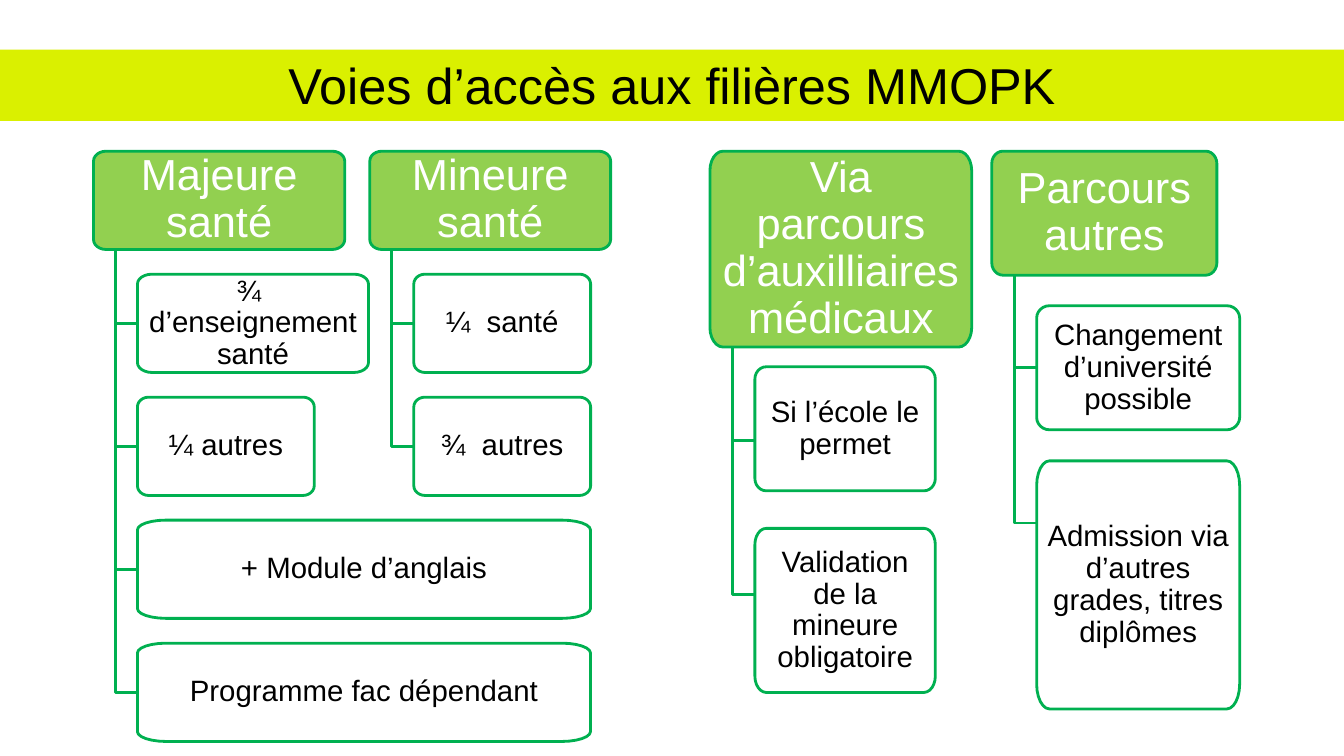
from dataclasses import dataclass
from math import cos, pi, sin

from pptx import Presentation
from pptx.dml.color import RGBColor
from pptx.enum.shapes import MSO_SHAPE
from pptx.enum.text import MSO_ANCHOR, PP_ALIGN
from pptx.util import Pt

RECTANGLE = MSO_SHAPE.RECTANGLE
TOP, MIDDLE = MSO_ANCHOR.TOP, MSO_ANCHOR.MIDDLE
CENTER = PP_ALIGN.CENTER


@dataclass(frozen=True)
class Theme:
    font: str = "Arial"
    black: RGBColor = RGBColor.from_string("000000")
    white: RGBColor = RGBColor.from_string("FFFFFF")
    banner: RGBColor = RGBColor.from_string("DAF000")
    header: RGBColor = RGBColor.from_string("92D050")
    outline: RGBColor = RGBColor.from_string("00B050")
    title_size: int = 36
    header_size: int = 31
    item_size: int = 21
    line_width: int = 2


theme = Theme()

TITLE_FORMAT = {"size": theme.title_size, "color": theme.black, "anchor": TOP,
                "margins": (7.2, 3.6), "spacing": 1.0}
HEADER_FORMAT = {"size": theme.header_size, "color": theme.white, "anchor": MIDDLE,
                 "margins": (7, 5), "spacing": 0.9,
                 "fill": theme.header, "corner": 0.05}
ITEM_FORMAT = {"size": theme.item_size, "color": theme.black, "anchor": MIDDLE,
               "margins": (5, 4.2), "spacing": 0.9,
               "fill": theme.white, "corner": 0.063}


def write_text(shape, text, style):
    frame = shape.text_frame
    side, edge = (Pt(margin) for margin in style["margins"])
    frame_values = {"word_wrap": True, "vertical_anchor": style["anchor"],
                    "margin_left": side, "margin_right": side,
                    "margin_top": edge, "margin_bottom": edge}
    for name, value in frame_values.items():
        setattr(frame, name, value)
    paragraph = frame.paragraphs[0]
    paragraph.alignment = CENTER
    paragraph.line_spacing = style["spacing"]
    run = paragraph.add_run()
    run.text = text
    for name, value in {"name": theme.font, "size": Pt(style["size"])}.items():
        setattr(run.font, name, value)
    run.font.color.rgb = style["color"]


def draw_outline(points, closed):
    """Draw a green outline through points given in points of length."""
    corners = [(Pt(x), Pt(y)) for x, y in points]
    builder = slide.shapes.build_freeform(*corners[0])
    builder.add_line_segments(corners[1:], close=closed)
    shape = builder.convert_to_shape()
    shape.shadow.inherit = False
    shape.line.color.rgb = theme.outline
    shape.line.width = Pt(theme.line_width)
    return shape


presentation = Presentation()
presentation.slide_width = Pt(960)
presentation.slide_height = Pt(540)
slide = presentation.slides.add_slide(presentation.slide_layouts[6])

banner = slide.shapes.add_shape(RECTANGLE, Pt(0), Pt(35.4), Pt(960), Pt(51))
banner.shadow.inherit = False
banner.fill.solid()
banner.fill.fore_color.rgb = theme.banner
banner.line.fill.background()
write_text(banner, "Voies d’accès aux filières MMOPK", TITLE_FORMAT)

HEADER_TOP = 108
ROW_HEIGHT = 70.2
ROWS = [HEADER_TOP + 87.85 * row for row in range(5)]
ROW_JOIN = ROW_HEIGHT / 2
ARC_STEPS = 6

# Column: title, left, width, height, item indent, items
# Item: text, top, width, height, distance from its top to its branch
columns = [
    ("Majeure santé", 66.8, 179.4, ROW_HEIGHT, 31.4, [
        ("¾  d’enseignement santé", ROWS[1], 165, ROW_HEIGHT, ROW_JOIN),
        ("¼ autres", ROWS[2], 126.3, ROW_HEIGHT, ROW_JOIN),
        ("+ Module d’anglais", ROWS[3], 323.6, ROW_HEIGHT, ROW_JOIN),
        ("Programme fac dépendant", ROWS[4], 323.6, ROW_HEIGHT, ROW_JOIN),
    ]),
    ("Mineure santé", 264.2, 172, ROW_HEIGHT, 31.4, [
        ("¼  santé", ROWS[1], 126.3, ROW_HEIGHT, ROW_JOIN),
        ("¾  autres", ROWS[2], 126.3, ROW_HEIGHT, ROW_JOIN),
    ]),
    ("Via parcours d’auxilliaires médicaux", 507.1, 187, 139.9, 32.1, [
        ("Si l’école le permet", 262, 128.9, 88.6, 52.6),
        ("Validation de la mineure obligatoire", 377.4, 128.9, 117.2, 47.4),
    ]),
    ("Parcours autres", 708.4, 160.8, 88.6, 32.1, [
        ("Changement d’université possible", 218.4, 145, 88.6, 44.3),
        ("Admission via d’autres grades, titres diplômes", 329.2, 145, 177.2, 44.3),
    ]),
]

boxes = []
for title, left, width, height, indent, items in columns:
    boxes.append((title, left, HEADER_TOP, width, height, HEADER_FORMAT))
    trunk = left + indent / 2
    for text, top, item_width, item_height, join in items:
        branch = [(trunk, HEADER_TOP + height), (trunk, top + join),
                  (left + indent, top + join)]
        draw_outline(branch, closed=False).fill.background()
        boxes.append((text, left + indent, top, item_width, item_height, ITEM_FORMAT))

for text, left, top, width, height, style in boxes:
    radius_x, radius_y = style["corner"] * width, 0.1 * height
    outline = []
    for quarter, (side, edge) in enumerate([(1, 1), (-1, 1), (-1, -1), (1, -1)]):
        center_x = left + width / 2 + side * (width / 2 - radius_x)
        center_y = top + height / 2 + edge * (height / 2 - radius_y)
        for step in range(ARC_STEPS + 1):
            angle = (quarter + step / ARC_STEPS) * pi / 2
            outline.append((center_x + radius_x * cos(angle),
                            center_y + radius_y * sin(angle)))
    box = draw_outline(outline, closed=True)
    box.fill.solid()
    box.fill.fore_color.rgb = style["fill"]
    write_text(box, text, style)

presentation.save("out.pptx")
